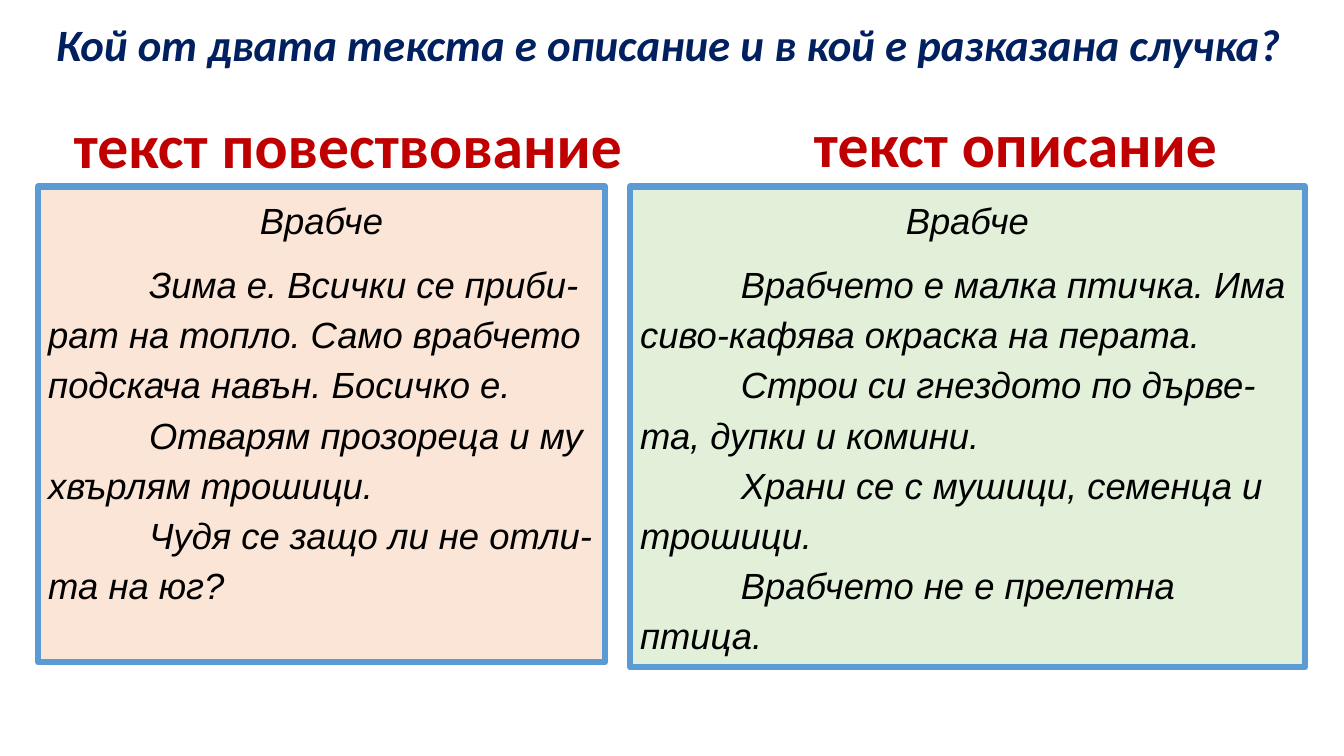
from dataclasses import dataclass

from pptx import Presentation
from pptx.dml.color import RGBColor
from pptx.enum.shapes import MSO_SHAPE
from pptx.enum.text import MSO_ANCHOR, MSO_AUTO_SIZE, PP_ALIGN
from pptx.util import Inches, Pt


@dataclass(frozen=True)
class Theme:
    question: RGBColor = RGBColor.from_string("002060")
    heading: RGBColor = RGBColor.from_string("C00000")
    story: RGBColor = RGBColor.from_string("000000")
    border: RGBColor = RGBColor.from_string("5B9BD5")
    peach: RGBColor = RGBColor.from_string("FBE5D6")
    green: RGBColor = RGBColor.from_string("E2F0D9")
    question_size: Pt = Pt(32)
    heading_size: Pt = Pt(44)
    story_size: Pt = Pt(26)
    display_font: str = "Calibri"
    story_font: str = "Arial"


theme = Theme()


def style_runs(paragraph, name, size, color, bold=False, italic=False):
    for run in paragraph.runs:
        font = run.font
        font.name, font.size, font.bold, font.italic = name, size, bold, italic
        font.color.rgb = color


def set_frame(frame):
    """Wrap the text and start it at the top of its box."""
    frame.word_wrap = True
    frame.auto_size = MSO_AUTO_SIZE.NONE
    frame.vertical_anchor = MSO_ANCHOR.TOP
    frame.margin_left = frame.margin_right = Inches(0.1)
    frame.margin_top = frame.margin_bottom = Inches(0.05)


prs = Presentation()
prs.slide_width, prs.slide_height = Inches(13.33), Inches(7.5)
slide = prs.slides.add_slide(prs.slide_layouts[5])

# Question
question = slide.shapes.title
question.left, question.top = Inches(0.24), Inches(0.12)
question.width, question.height = Inches(12.79), Inches(0.64)
set_frame(question.text_frame)
question.text_frame.text = "Кой от двата текста е описание и в кой е разказана случка?"
question_line = question.text_frame.paragraphs[0]
question_line.alignment = PP_ALIGN.CENTER
style_runs(question_line, theme.display_font, theme.question_size, theme.question,
           bold=True, italic=True)

# Kind of text, heading left and top, panel left, width and height, fill, paragraphs
columns = [
    ("текст повествование", 0.5, 1.01, 0.38, 5.62, 4.72, theme.peach, [
        "Зима е. Всички се приби-рат на топло. Само врабчето подскача навън. Босичко е.",
        "Отварям прозореца и му хвърлям трошици.",
        "Чудя се защо ли не отли-та на юг?",
    ]),
    ("текст описание", 7.12, 1, 6.25, 6.69, 4.77, theme.green, [
        "Врабчето е малка птичка. Има сиво-кафява окраска на перата.",
        "Строи си гнездото по дърве-та, дупки и комини.",
        "Храни се с мушици, семенца и трошици.",
        "Врабчето не е прелетна птица.",
    ]),
]

for kind, kind_left, kind_top, left, width, height, fill, sentences in columns:
    heading = slide.shapes.add_textbox(
        Inches(kind_left), Inches(kind_top), Inches(5.91), Inches(0.84))
    set_frame(heading.text_frame)
    heading.text_frame.text = kind
    heading_line = heading.text_frame.paragraphs[0]
    heading_line.alignment = PP_ALIGN.CENTER
    style_runs(heading_line, theme.display_font, theme.heading_size, theme.heading, bold=True)

    panel = slide.shapes.add_shape(
        MSO_SHAPE.RECTANGLE, Inches(left), Inches(1.85), Inches(width), Inches(height))
    panel.shadow.inherit = False
    panel.fill.solid()
    panel.fill.fore_color.rgb = fill
    panel.line.color.rgb = theme.border
    panel.line.width = Pt(4.5)
    set_frame(panel.text_frame)
    panel.text_frame.text = "\n".join(["Врабче", *sentences])

    story_title, *story = panel.text_frame.paragraphs
    for paragraph in (story_title, *story):
        paragraph.alignment = PP_ALIGN.LEFT
        paragraph.line_spacing = 1.15
        paragraph.space_after = Pt(0)
        style_runs(paragraph, theme.story_font, theme.story_size, theme.story, italic=True)
    for paragraph in story:
        paragraph._p.get_or_add_pPr().set("indent", str(Inches(1)))
    story_title.alignment = PP_ALIGN.CENTER
    story_title.space_after = story[-1].space_after = Pt(10)

prs.save("out.pptx")
